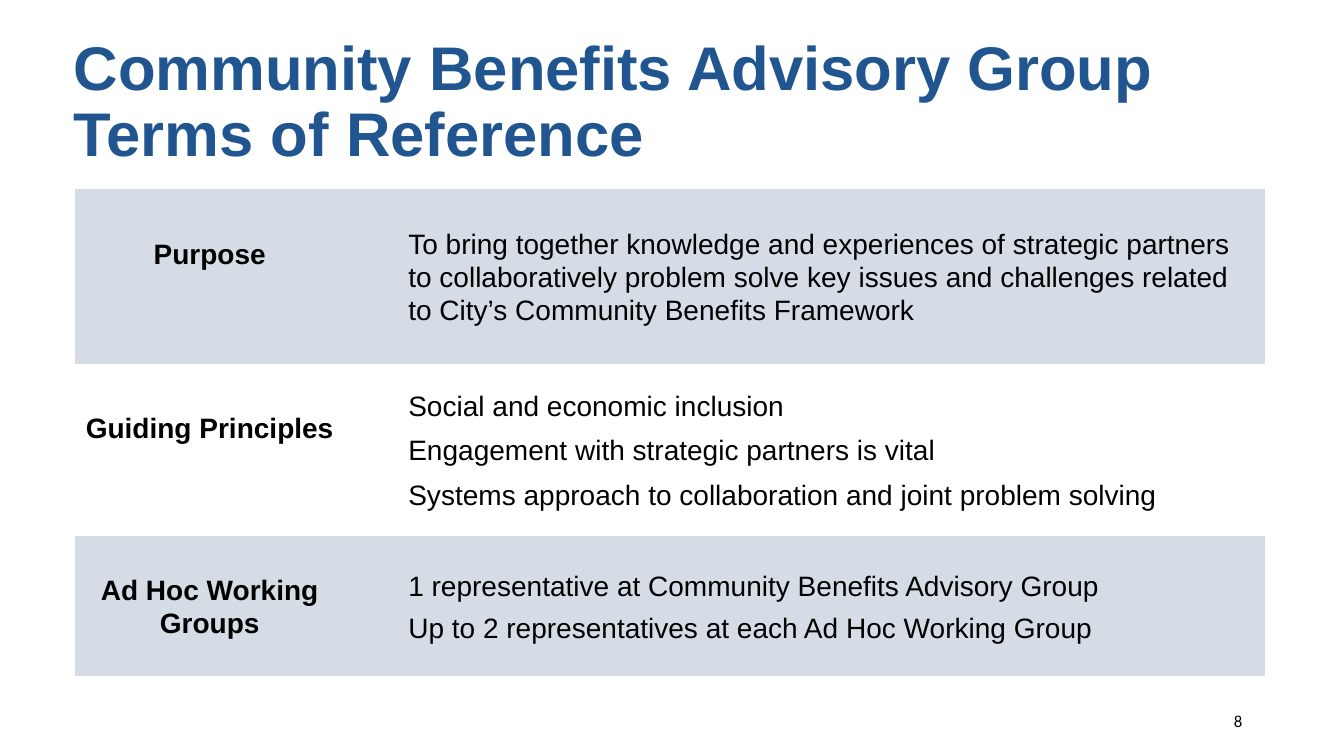
from pptx import Presentation
from pptx.dml.color import RGBColor
from pptx.enum.text import MSO_ANCHOR, PP_ALIGN
from pptx.oxml.ns import qn
from pptx.util import Inches, Pt

TITLE = "Community Benefits Advisory Group Terms of Reference"
PAGE_NUMBER = "8"
# Label, row height, space kept free below the label, lines as (text, space before, space after)
TERMS = [
    ("Purpose", 1.73, 0.45, [
        ("To bring together knowledge and experiences of strategic partners to "
         "collaboratively problem solve key issues and challenges related to "
         "City’s Community Benefits Framework", 0, 8)]),
    ("Guiding Principles", 1.71, 0.45, [
        ("Social and economic inclusion", 0, 8),
        ("Engagement with strategic partners is vital", 0, 8),
        ("Systems approach to collaboration and joint problem solving", 0, 6)]),
    ("Ad Hoc Working Groups", 1.39, 0, [
        ("1 representative at Community Benefits Advisory Group", 0, 6),
        ("Up to 2 representatives at each Ad Hoc Working Group", 0, 8)]),
]
COLUMN_WIDTHS = [2.68, 0.56, 8.57]
NO_GRID_STYLE = "{2D5ABB26-0587-4C30-8999-92F81FD0307C}"

BLUE = RGBColor(0x20, 0x55, 0x90)
BLACK = RGBColor(0, 0, 0)
BAND = RGBColor(0xD6, 0xDC, 0xE5)


def style_font(font, size, color, bold=False, name="Arial"):
    font.name, font.size, font.bold = name, Pt(size), bold
    font.color.rgb = color


def place(shape, left, top, width, height):
    shape.left, shape.top = Inches(left), Inches(top)
    shape.width, shape.height = Inches(width), Inches(height)


def write_cell(cell, lines, bold=False, alignment=PP_ALIGN.LEFT, bottom=0):
    cell.vertical_anchor = MSO_ANCHOR.MIDDLE
    cell.margin_left = cell.margin_right = Inches(0.07)
    cell.margin_top, cell.margin_bottom = 0, Inches(bottom)
    cell.text_frame.text = "\n".join(text for text, _, _ in lines)
    for paragraph, (_, before, after) in zip(cell.text_frame.paragraphs, lines):
        paragraph.alignment = alignment
        paragraph.line_spacing = 1.07
        paragraph.space_before, paragraph.space_after = Pt(before), Pt(after)
        style_font(paragraph.runs[0].font, 20, BLACK, bold)


def add_title(slide):
    title = slide.shapes.title
    place(title, 0.63, 0.3, 11.5, 1.45)
    title.text_frame.text = TITLE
    title.text_frame.vertical_anchor = MSO_ANCHOR.MIDDLE
    paragraph = title.text_frame.paragraphs[0]
    paragraph.alignment = PP_ALIGN.LEFT
    paragraph.line_spacing = 0.9
    style_font(paragraph.runs[0].font, 44, BLUE, True)


def add_terms_table(slide):
    heights = [height for _, height, _, _ in TERMS]
    frame = slide.shapes.add_table(
        len(TERMS), len(COLUMN_WIDTHS), Inches(0.74), Inches(1.88),
        Inches(sum(COLUMN_WIDTHS)), Inches(sum(heights)))
    table = frame.table
    table.first_row = table.horz_banding = False
    table._tbl.tblPr.find(qn("a:tableStyleId")).text = NO_GRID_STYLE
    for column, width in zip(table.columns, COLUMN_WIDTHS):
        column.width = Inches(width)
    for index, (label, height, bottom, lines) in enumerate(TERMS):
        row = table.rows[index]
        row.height = Inches(height)
        for cell in row.cells:
            if index % 2 == 0:
                cell.fill.solid()
                cell.fill.fore_color.rgb = BAND
            else:
                cell.fill.background()
        write_cell(row.cells[0], [(label, 0, 8)], True, PP_ALIGN.CENTER, bottom)
        write_cell(row.cells[2], lines)


def add_page_number(slide):
    box = slide.shapes.add_textbox(Inches(9.42), Inches(6.95), Inches(3), Inches(0.4))
    box.text_frame.word_wrap = True
    box.text_frame.vertical_anchor = MSO_ANCHOR.MIDDLE
    box.text_frame.text = PAGE_NUMBER
    paragraph = box.text_frame.paragraphs[0]
    paragraph.alignment = PP_ALIGN.RIGHT
    style_font(paragraph.runs[0].font, 12, BLACK, name="Calibri")


def main():
    presentation = Presentation()
    presentation.slide_width, presentation.slide_height = Inches(13.33), Inches(7.5)
    slide = presentation.slides.add_slide(presentation.slide_layouts[5])
    add_title(slide)
    add_terms_table(slide)
    add_page_number(slide)
    presentation.save("out.pptx")


if __name__ == "__main__":
    main()
